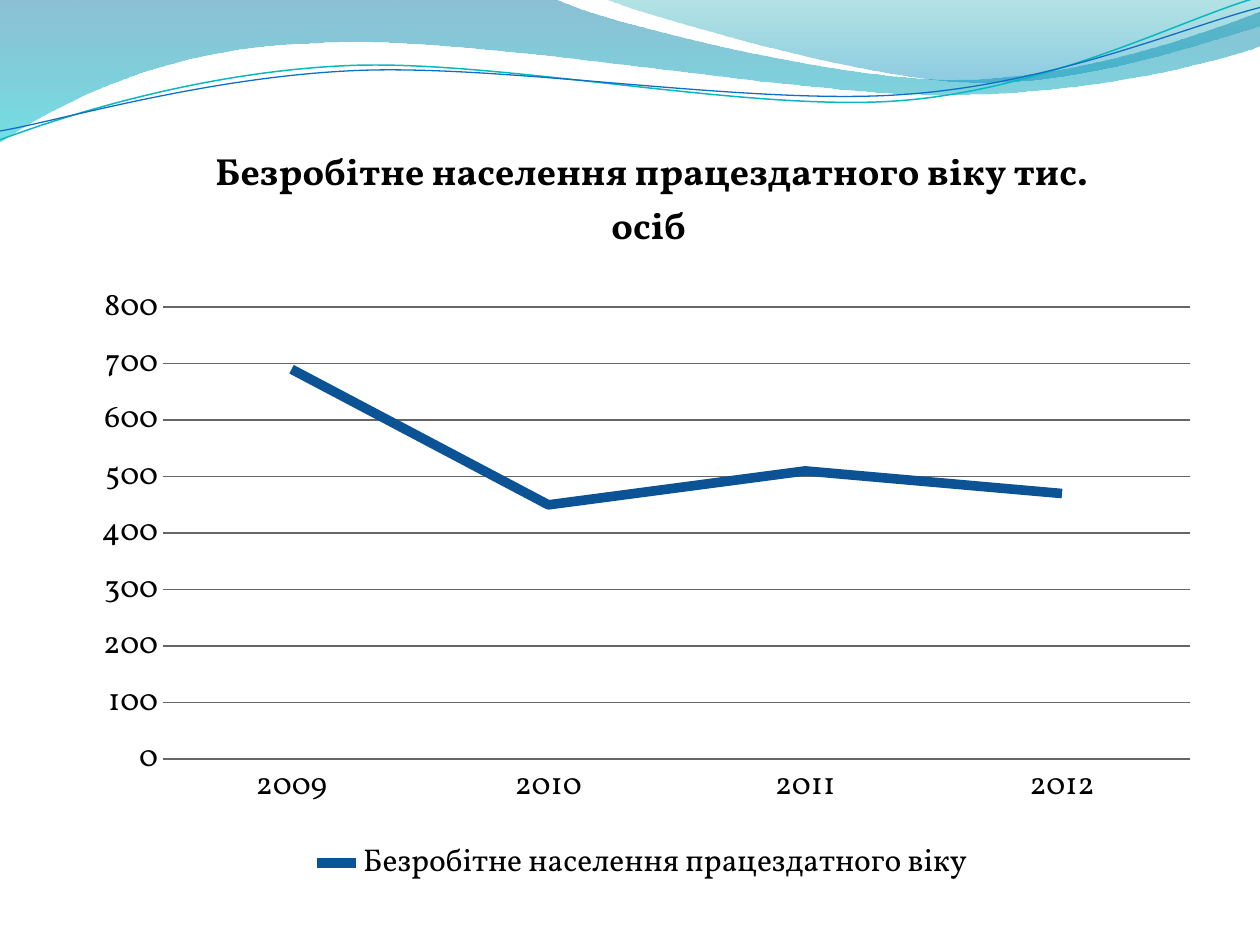
import math
from dataclasses import dataclass

from lxml import etree
from pptx import Presentation
from pptx import util as u
from pptx.chart.data import CategoryChartData
from pptx.dml.color import RGBColor
from pptx.enum import chart as ch
from pptx.oxml.ns import qn


@dataclass(frozen=True)
class Theme:
    font: str = "Vollkorn"
    body_size: float = 18
    title_size: float = 21.6
    ink: str = "000000"
    grid: str = "666666"
    series: str = "0B5394"
    teal_line: str = "0AB8BF"
    blue_line: str = "0F6FC6"
    # (colour, opacity in percent) from top to bottom
    wide_wave: tuple = (("0074A1", 45), ("00C6CF", 55))
    right_wave: tuple = (("00A1A9", 30), ("008BBF", 45))


def rgb(code):
    return RGBColor.from_string(code)


def turn(point, centre, degrees):
    """Turn a point clockwise about a centre."""
    dx, dy = point[0] - centre[0], point[1] - centre[1]
    cos, sin = math.cos(math.radians(degrees)), math.sin(math.radians(degrees))
    return centre[0] + dx * cos - dy * sin, centre[1] + dx * sin + dy * cos


def place_manually(parent, **shares):
    """Give a chart part a fixed place, in shares of the chart."""
    layout = parent.find(qn("c:layout"))
    if layout is None:
        layout = etree.Element(qn("c:layout"))
        text = parent.find(qn("c:tx"))
        parent.insert(0 if text is None else 1, layout)
    for old in list(layout):
        layout.remove(old)
    manual = etree.SubElement(layout, qn("c:manualLayout"))
    if "w" in shares:
        etree.SubElement(manual, qn("c:layoutTarget"), val="inner")
    for side in "xy":
        etree.SubElement(manual, qn(f"c:{side}Mode"), val="edge")
    for side, share in shares.items():
        etree.SubElement(manual, qn(f"c:{side}"), val=str(share))


class SlideBuilder:
    def __init__(self, prs, theme):
        self.theme = theme
        self.width, self.height = prs.slide_width, prs.slide_height
        self.slide = prs.slides.add_slide(prs.slide_layouts[6])

    def outline(self, segments, close):
        """Draw segments of one point (straight) or three points (cubic curve), in inches."""
        points = [(u.Inches(x), u.Inches(y)) for segment in segments for x, y in segment]
        builder = self.slide.shapes.build_freeform(*points[0])
        builder.add_line_segments(points[1:], close=close)
        shape = builder.convert_to_shape()
        shape.shadow.inherit = False
        lines = list(shape._element.spPr.iter(qn("a:lnTo")))
        for segment in segments[1:]:
            step, lines = lines[:len(segment)], lines[len(segment):]
            if len(segment) == 3:
                curve = etree.Element(qn("a:cubicBezTo"))
                step[0].addprevious(curve)
                for line in step:
                    curve.append(line[0])
                    line.getparent().remove(line)
        return shape

    def wave(self, segments, stops):
        shape = self.outline(segments, close=True)
        shape.line.fill.background()
        shape.fill.gradient()
        shape.fill.gradient_angle = 270
        for position, stop, (colour, _) in zip((0, 1), shape.fill.gradient_stops, stops):
            stop.position = position
            stop.color.rgb = rgb(colour)
        for node, (_, opacity) in zip(shape._element.spPr.iter(qn("a:srgbClr")), stops):
            etree.SubElement(node, qn("a:alpha"), val=str(opacity * 1000))

    def strand(self, segments, centre, colour, weight, tilt=2.7):
        level = [[turn(point, centre, tilt) for point in segment] for segment in segments]
        shape = self.outline(level, close=False)
        shape.rotation = 360 - tilt
        shape.fill.background()
        shape.line.color.rgb = rgb(colour)
        shape.line.width = u.Pt(weight)

    def style(self, font, size, bold=False):
        font.name, font.size, font.bold = self.theme.font, u.Pt(size), bold
        font.color.rgb = rgb(self.theme.ink)

    def line_chart(self, title, series_name, by_year, left, top, width, height):
        """Place a line chart; the box is given as shares of the slide."""
        data = CategoryChartData()
        data.categories = list(by_year)
        data.add_series(series_name, by_year.values())
        chart = self.slide.shapes.add_chart(
            ch.XL_CHART_TYPE.LINE, int(left * self.width), int(top * self.height),
            int(width * self.width), int(height * self.height), data).chart
        self.style(chart.font, self.theme.body_size)

        chart.has_title = True
        heading = chart.chart_title.text_frame
        heading.text = title
        self.style(heading.paragraphs[0].runs[0].font, self.theme.title_size, bold=True)
        chart.chart_title.include_in_layout = False

        chart.has_legend = True
        chart.legend.position = ch.XL_LEGEND_POSITION.BOTTOM
        chart.legend.include_in_layout = False

        years, amounts = chart.category_axis, chart.value_axis
        for axis in (years, amounts):
            axis.major_tick_mark = axis.minor_tick_mark = ch.XL_TICK_MARK.NONE
        amounts.minimum_scale, amounts.maximum_scale, amounts.major_unit = 0, 800, 100
        amounts.format.line.fill.background()
        for rule in (years.format.line, amounts.major_gridlines.format.line):
            rule.color.rgb = rgb(self.theme.grid)
            rule.width = u.Pt(0.75)

        chart.plots[0].vary_by_categories = False
        unemployed = chart.plots[0].series[0]
        unemployed.smooth = False
        unemployed.marker.style = ch.XL_MARKER_STYLE.NONE
        unemployed.format.line.color.rgb = rgb(self.theme.series)
        unemployed.format.line.width = u.Pt(5.5)

        plot_area = chart._chartSpace.chart.plotArea
        place_manually(plot_area, x=0.075, y=0.234, w=0.906, h=0.592)
        place_manually(chart.chart_title._element, x=0.115, y=0.012)


def main():
    prs = Presentation()
    prs.slide_width, prs.slide_height = u.Inches(10), u.Inches(7.5)
    theme = Theme()
    page = SlideBuilder(prs, theme)

    page.wave([[(0, 0)], [(4.4, -0.01)],
               [(4.76, 0.17), (6.64, 0.63), (7.58, 0.63)],
               [(8.53, 0.63), (9.58, 0.26), (10, 0.09)], [(10.01, 0.36)],
               [(9.83, 0.44), (8.7, 0.76), (7.46, 0.75)],
               [(6.22, 0.75), (3.82, 0.28), (2.57, 0.34)],
               [(1.29, 0.36), (0.46, 0.83), (-0.01, 1.13)]], theme.wide_wave)
    page.wave([[(4.79, -0.01)],
               [(5.09, 0.11), (6.82, 0.62), (7.69, 0.65)],
               [(8.56, 0.69), (9.61, 0.32), (10, 0.21)], [(10, 0)]], theme.right_wave)
    page.strand([[(0, 1.11)],
                 [(0.48, 0.93), (1.58, 0.57), (2.77, 0.52)],
                 [(3.95, 0.47), (5.93, 0.89), (7.13, 0.8)],
                 [(8.33, 0.71), (9.38, 0.15), (9.98, -0.02)]],
                (4.99, 0.57), theme.teal_line, 0.85)
    page.strand([[(0, 1.04)],
                 [(0.47, 0.96), (1.64, 0.61), (2.83, 0.56)],
                 [(4.03, 0.51), (5.97, 0.84), (7.17, 0.75)],
                 [(8.36, 0.67), (9.41, 0.21), (10, 0.06)]],
                (5, 0.59), theme.blue_line, 0.75)

    page.line_chart("Безробітне населення працездатного віку тис. осіб ",
                    "Безробітне населення працездатного віку ",
                    {"2009": 690, "2010": 450, "2011": 510, "2012": 470},
                    left=0.062, top=0.136, width=0.9, height=0.808)
    prs.save("out.pptx")


if __name__ == "__main__":
    main()
